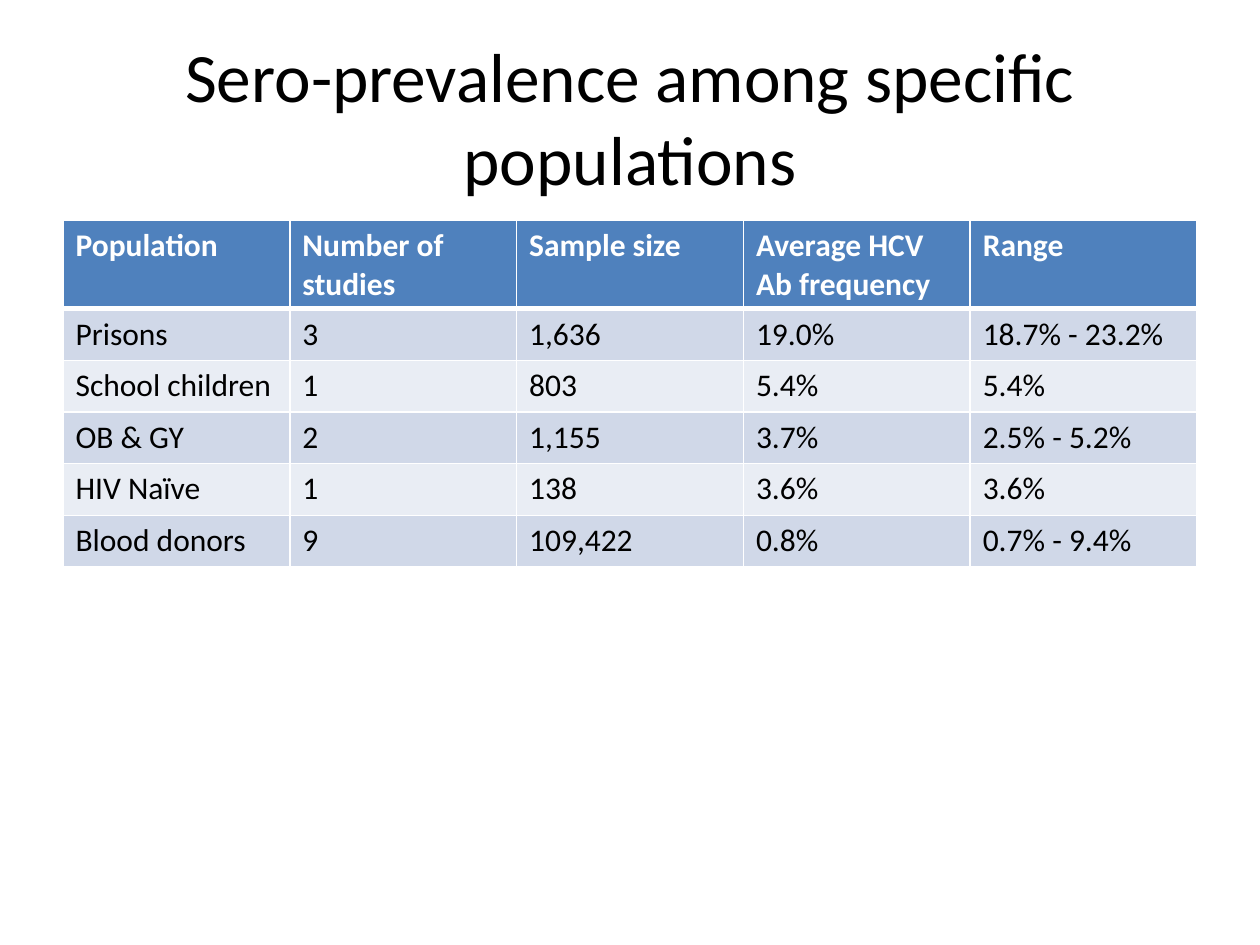
from lxml import etree
from pptx import Presentation
from pptx.dml.color import RGBColor
from pptx.enum.text import MSO_ANCHOR, PP_ALIGN
from pptx.oxml.ns import qn
from pptx.util import Inches, Pt

CENTER, LEFT = PP_ALIGN.CENTER, PP_ALIGN.LEFT
MIDDLE = MSO_ANCHOR.MIDDLE
BLANK_LAYOUT = 6

COLORS = {
    "text": "000000",
    "header": "4F81BD",
    "header_text": "FFFFFF",
    "odd_row": "D0D8E8",
    "even_row": "E9EDF4",
    "border": "FFFFFF",
}
FORMATS = {
    "title": {"size": Pt(39.6), "bold": False},
    "header": {"size": Pt(18), "bold": True},
    "body": {"size": Pt(18), "bold": False},
}

TITLE = "Sero-prevalence among specific populations"
ROWS = [
    ("Population", "Number of studies", "Sample size",
     "Average HCV Ab frequency", "Range"),
    ("Prisons", "3", "1,636", "19.0%", "18.7% - 23.2%"),
    ("School children", "1", "803", "5.4%", "5.4%"),
    ("OB & GY", "2", "1,155", "3.7%", "2.5% - 5.2%"),
    ("HIV Naïve", "1", "138", "3.6%", "3.6%"),
    ("Blood donors", "9", "109,422", "0.8%", "0.7% - 9.4%"),
]


class SlideBuilder:
    """Holds the font, the colours and the slide being filled."""

    def __init__(self, s, font="Calibri"):
        self.s = s
        self.font = font

    def color(self, name):
        return RGBColor.from_string(COLORS[name])

    def add_text(self, tf, text, style, color, align):
        p = tf.paragraphs[0]
        p.alignment = align
        r = p.add_run()
        r.text = text
        r.font.name = self.font
        r.font.color.rgb = self.color(color)
        for name, value in FORMATS[style].items():
            setattr(r.font, name, value)

    def title(self, text, left, top, width, height):
        sp = self.s.shapes.add_textbox(
            Inches(left), Inches(top), Inches(width), Inches(height))
        tf = sp.text_frame
        tf.word_wrap = True
        tf.vertical_anchor = MIDDLE
        self.add_text(tf, text, "title", "text", CENTER)

    def borders(self, cell, widths):
        """Draw the cell's borders; widths maps L, R, T, B to points."""
        tc_pr = cell._tc.get_or_add_tcPr()
        for side, width in widths.items():
            ln = etree.SubElement(tc_pr, qn(f"a:ln{side}"), w=str(Pt(width)))
            fill = etree.SubElement(ln, qn("a:solidFill"))
            etree.SubElement(fill, qn("a:srgbClr"), val=COLORS["border"])

    def table(self, rows, left, top, width, row_height):
        """Add a banded table with equal columns and a header row."""
        table = self.s.shapes.add_table(
            len(rows), len(rows[0]), Inches(left), Inches(top),
            Inches(width), Inches(row_height * len(rows))).table
        for i, row in enumerate(rows):
            if i == 0:
                style, color, fill = "header", "header_text", "header"
            else:
                style, color = "body", "text"
                fill = "odd_row" if i % 2 else "even_row"
            widths = {"L": 1, "R": 1,
                      "T": 3 if i == 1 else 1, "B": 3 if i == 0 else 1}
            for j, text in enumerate(row):
                cell = table.cell(i, j)
                self.borders(cell, widths)
                cell.fill.solid()
                cell.fill.fore_color.rgb = self.color(fill)
                self.add_text(cell.text_frame, text, style, color, LEFT)


def main():
    prs = Presentation()
    prs.slide_width, prs.slide_height = Inches(10), Inches(7.5)
    s = prs.slides.add_slide(prs.slide_layouts[BLANK_LAYOUT])
    builder = SlideBuilder(s)
    builder.title(TITLE, 0.5, 0.3, 9, 1.25)
    builder.table(ROWS, 0.5, 1.75, 9, 0.41)
    prs.save("out.pptx")


if __name__ == "__main__":
    main()
